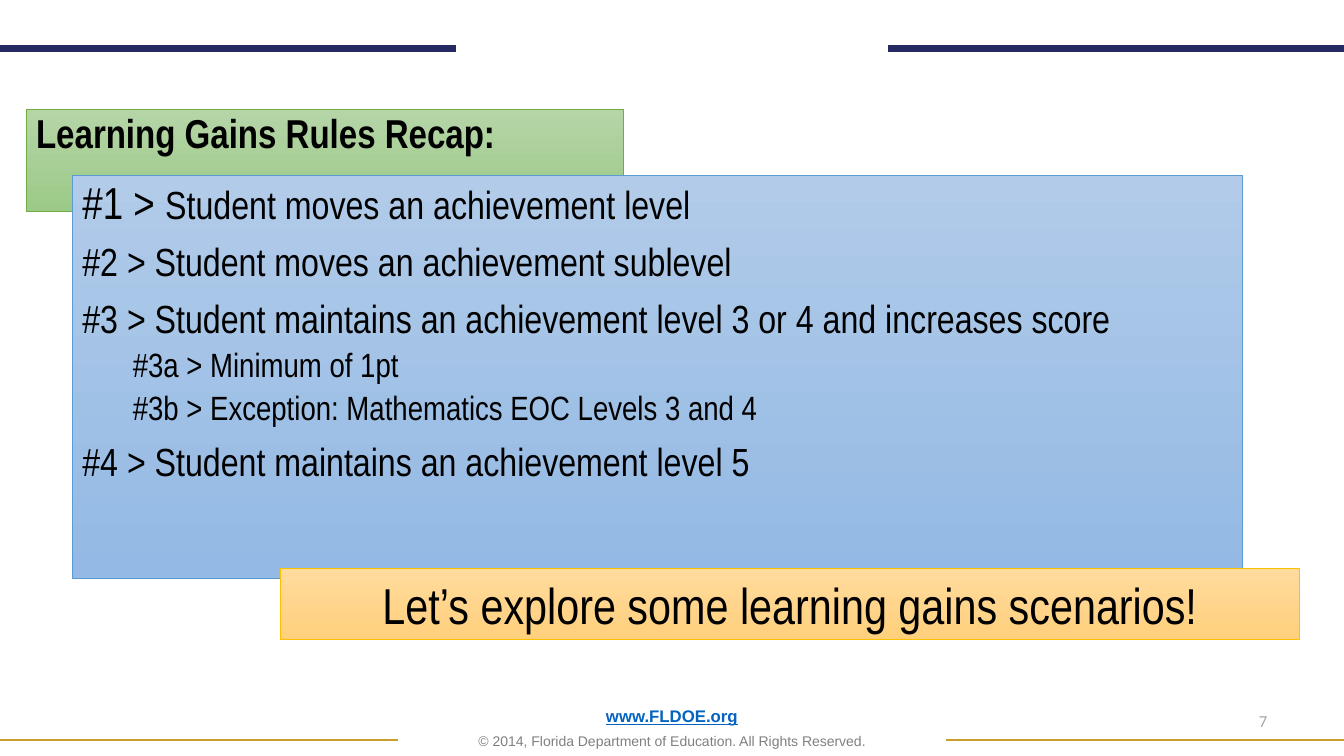
"""Build the learning gains recap slide."""
import dataclasses
import typing

import lxml.etree
import pptx
import pptx.dml.color
import pptx.enum.shapes
import pptx.enum.text
import pptx.oxml.ns
import pptx.util

Pt = pptx.util.Pt
RGBColor = pptx.dml.color.RGBColor
Align = pptx.enum.text.PP_ALIGN
Anchor = pptx.enum.text.MSO_ANCHOR

BLACK = RGBColor(0x00, 0x00, 0x00)
GRAY = RGBColor(0x80, 0x80, 0x80)
LIGHT_GRAY = RGBColor(0xA6, 0xA6, 0xA6)
LINK_BLUE = RGBColor(0x05, 0x63, 0xC1)
NAVY = RGBColor(0x26, 0x2A, 0x63)
GOLD = RGBColor(0xCD, 0x9D, 0x2C)
GREEN_TOP = RGBColor(0xB5, 0xD5, 0xA7)
GREEN_BOTTOM = RGBColor(0x9C, 0xC9, 0x87)
GREEN_LINE = RGBColor(0x70, 0xAD, 0x47)
BLUE_TOP = RGBColor(0xB1, 0xCB, 0xE9)
BLUE_BOTTOM = RGBColor(0x93, 0xB9, 0xE4)
BLUE_LINE = RGBColor(0x5B, 0x9B, 0xD5)
ORANGE_TOP = RGBColor(0xFF, 0xDB, 0x9E)
ORANGE_BOTTOM = RGBColor(0xFF, 0xD0, 0x7C)
ORANGE_LINE = RGBColor(0xFF, 0xC0, 0x00)

SLIDE_WIDTH = 960
SLIDE_HEIGHT = 540
SUBRULE_INDENT = 36


@dataclasses.dataclass(frozen=True)
class Run:
    """A piece of text with its font."""
    text: str
    size: float
    font: str = "Arial Narrow"
    color: RGBColor = BLACK
    bold: bool = False
    underline: bool = False


@dataclasses.dataclass(frozen=True)
class Line:
    """A paragraph with its spacing and level."""
    runs: tuple[Run, ...]
    space_before: float = 0
    line_spacing: float = 0.9
    alignment: Align = Align.LEFT
    level: int = 0


@dataclasses.dataclass(frozen=True)
class Panel:
    """A text area, with a gradient and an outline if colours are given."""
    left: float
    top: float
    width: float
    height: float
    lines: tuple[Line, ...]
    anchor: Anchor = Anchor.TOP
    colors: typing.Optional[tuple[RGBColor, RGBColor, RGBColor]] = None


@dataclasses.dataclass(frozen=True)
class Rule:
    """A horizontal line that starts at a slide edge."""
    left: float
    right: float
    top: float
    color: RGBColor
    weight: float


RULES = (
    Rule(0, 284.4, 528.5, GOLD, 1),
    Rule(0, 325.7, 34.6, NAVY, 5),
    Rule(634.3, SLIDE_WIDTH, 34.6, NAVY, 5),
    Rule(675.8, SLIDE_WIDTH, 528.5, GOLD, 1),
)

PANELS = (
    Panel(66, 508.3, 828, 31, (
        Line((Run("www.FLDOE.org", 12, "Arial", LINK_BLUE, True, True),),
             alignment=Align.CENTER),
        Line((Run("© 2014, Florida Department of Education. All Rights Reserved.",
                  10, "Arial", GRAY),), 6, alignment=Align.CENTER),
    ), Anchor.BOTTOM),
    Panel(688.3, 500.5, 224, 28.8, (
        Line((Run("7", 12, "Calibri", LIGHT_GRAY),), line_spacing=1.0,
             alignment=Align.RIGHT),
    ), Anchor.MIDDLE),
    Panel(18.7, 78, 426.5, 73.2, (
        Line((Run("Learning Gains Rules Recap:", 28.8, bold=True),),),
    ), colors=(GREEN_TOP, GREEN_BOTTOM, GREEN_LINE)),
    Panel(51.8, 125.4, 836, 288, (
        Line((Run("#1 > ", 32), Run("Student moves an achievement level", 28))),
        Line((Run("#2 > Student moves an achievement sublevel", 28),), 10),
        Line((Run("#3 > Student maintains an achievement level 3 or 4 and increases score",
                  28),), 10),
        Line((Run("#3a > Minimum of 1pt", 24),), 5, level=1),
        Line((Run("#3b > Exception: Mathematics EOC Levels 3 and 4", 24),), 5, level=1),
        Line((Run("#4 > Student maintains an achievement level 5", 28),), 10),
    ), colors=(BLUE_TOP, BLUE_BOTTOM, BLUE_LINE)),
    Panel(200.2, 406.1, 728, 50.9, (
        Line((Run("Let’s explore some learning gains scenarios!", 36),),
             line_spacing=1.0, alignment=Align.CENTER),
    ), Anchor.BOTTOM, (ORANGE_TOP, ORANGE_BOTTOM, ORANGE_LINE)),
)


def apply_format(target: typing.Any, values: dict[str, typing.Any]) -> None:
    """Set each named attribute of the target."""
    for name, value in values.items():
        setattr(target, name, value)


def draw_rule(slide: typing.Any, rule: Rule) -> None:
    """Draw one horizontal line without a shadow."""
    connector = slide.shapes.add_connector(
        pptx.enum.shapes.MSO_CONNECTOR.STRAIGHT,
        Pt(rule.left), Pt(rule.top), Pt(rule.right), Pt(rule.top))
    connector.line.color.rgb = rule.color
    connector.line.width = Pt(rule.weight)
    properties = connector._element.spPr
    lxml.etree.SubElement(properties, pptx.oxml.ns.qn("a:effectLst"))


def write_line(paragraph: typing.Any, line: Line) -> None:
    """Fill one paragraph with its runs."""
    apply_format(paragraph, {
        "alignment": line.alignment, "level": line.level,
        "line_spacing": line.line_spacing, "space_before": Pt(line.space_before)})
    if line.level:
        properties = paragraph._p.get_or_add_pPr()
        properties.set("marL", str(Pt(SUBRULE_INDENT * line.level)))
        properties.set("indent", "0")
    for item in line.runs:
        run = paragraph.add_run()
        run.text = item.text
        apply_format(run.font, {
            "name": item.font, "size": Pt(item.size),
            "bold": item.bold, "underline": item.underline})
        run.font.color.rgb = item.color


def draw_panel(slide: typing.Any, panel: Panel) -> None:
    """Draw one text area and write its lines."""
    bounds = [Pt(value) for value in (panel.left, panel.top, panel.width, panel.height)]
    if panel.colors is None:
        shape = slide.shapes.add_textbox(*bounds)
    else:
        shape = slide.shapes.add_shape(
            pptx.enum.shapes.MSO_SHAPE.RECTANGLE, *bounds)
        shape.shadow.inherit = False
        shape.fill.gradient()
        shape.fill.gradient_angle = 270
        for stop, color in zip(shape.fill.gradient_stops, panel.colors):
            stop.color.rgb = color
        shape.line.color.rgb = panel.colors[2]
        shape.line.width = Pt(0.5)
    frame = shape.text_frame
    apply_format(frame, {"word_wrap": True, "vertical_anchor": panel.anchor})
    for index, line in enumerate(panel.lines):
        paragraph = frame.add_paragraph() if index else frame.paragraphs[0]
        write_line(paragraph, line)


def main() -> None:
    """Create the presentation and save it."""
    presentation = pptx.Presentation()
    apply_format(presentation, {
        "slide_width": Pt(SLIDE_WIDTH), "slide_height": Pt(SLIDE_HEIGHT)})
    slide = presentation.slides.add_slide(presentation.slide_layouts[6])
    for rule in RULES:
        draw_rule(slide, rule)
    for panel in PANELS:
        draw_panel(slide, panel)
    presentation.save("out.pptx")


if __name__ == "__main__":
    main()
